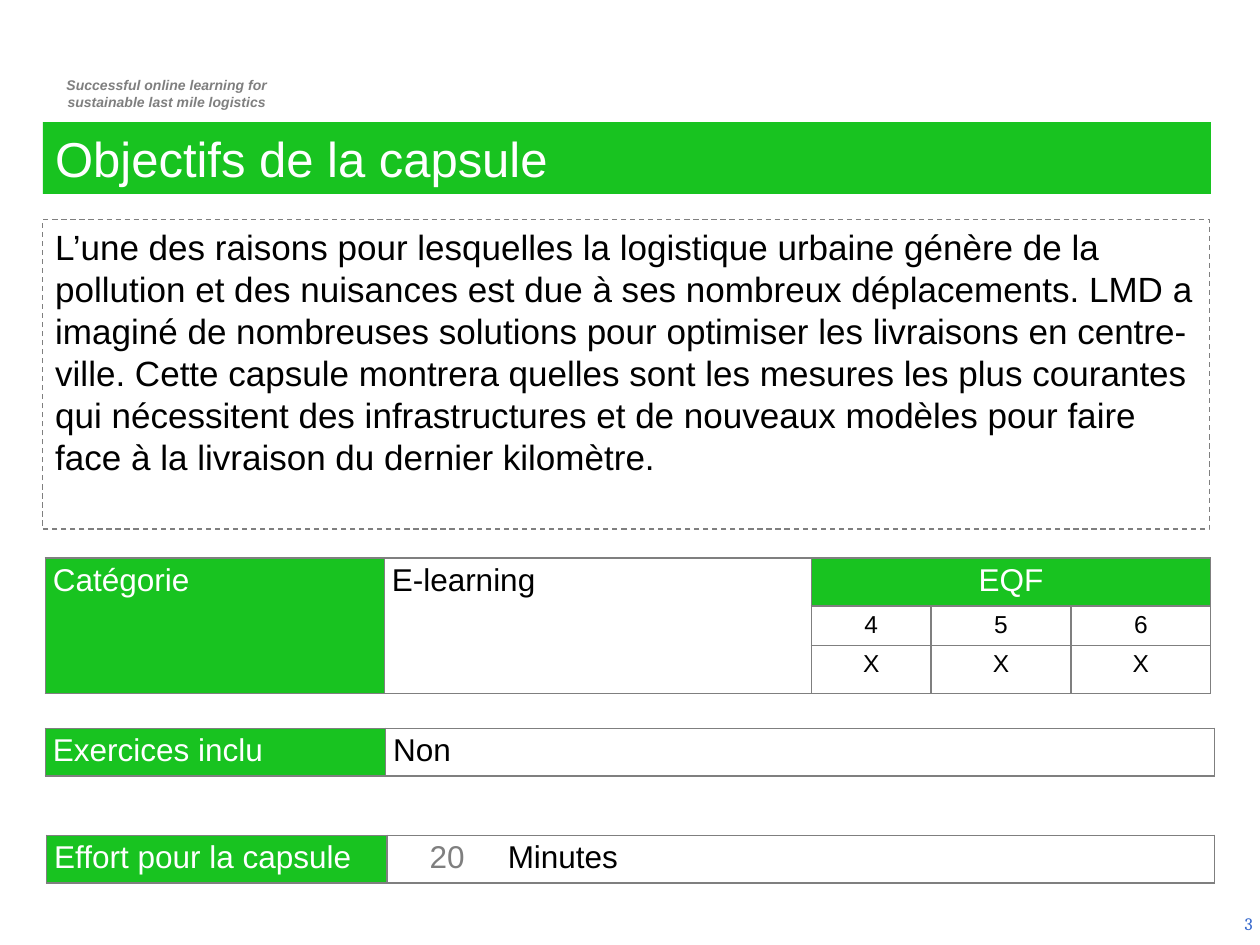
"""Build the capsule objectives slide with its three information tables."""
from lxml import etree
from pptx import Presentation
from pptx.dml.color import RGBColor
from pptx.enum import dml, shapes, text
from pptx.oxml import ns
from pptx.util import Inches, Pt

GREEN = RGBColor(0x18, 0xC3, 0x20)
GRAY = RGBColor(0x7F, 0x7F, 0x7F)
BLUE = RGBColor(0x33, 0x66, 0xCC)
BLACK = RGBColor(0, 0, 0)
WHITE = RGBColor(0xFF, 0xFF, 0xFF)
LEFT, CENTER, RIGHT = text.PP_ALIGN.LEFT, text.PP_ALIGN.CENTER, text.PP_ALIGN.RIGHT


def write(p, runs, align=LEFT, **fmt):
    p.alignment = align
    for words, color in runs:
        r = p.add_run()
        r.text = words
        for name, value in {"name": "Arial", **fmt}.items():
            setattr(r.font, name, value)
        r.font.color.rgb = color


def add_grid(s, x, y, cols, rows):
    size = [Inches(v) for v in (x, y, sum(cols), sum(rows))]
    tbl = s.shapes.add_table(len(rows), len(cols), *size).table
    tbl.first_row = tbl.horz_banding = False
    for lines, lengths, side in ((tbl.columns, cols, "width"), (tbl.rows, rows, "height")):
        for line, length in zip(lines, lengths):
            setattr(line, side, Inches(length))
    for cell in tbl.iter_cells():
        cell.margin_left = cell.margin_right = Inches(0.06)
        cell.margin_top = cell.margin_bottom = Inches(0.04)
        pr = cell._tc.get_or_add_tcPr()
        for edge in "LRTB":
            ln = etree.SubElement(pr, ns.qn(f"a:ln{edge}"), w=str(Pt(1)))
            fill = etree.SubElement(ln, ns.qn("a:solidFill"))
            etree.SubElement(fill, ns.qn("a:srgbClr"), val=str(GRAY))
        cell.fill.background()
    return tbl


prs = Presentation()
prs.slide_width, prs.slide_height = Inches(10), Inches(7.5)
s = prs.slides.add_slide(prs.slide_layouts[6])

tf = s.shapes.add_textbox(Inches(0.31), Inches(0.56), Inches(2.03), Inches(0.37)).text_frame
tf.word_wrap = True
tagline = ("Successful online learning for", "sustainable last mile logistics")
for i, words in enumerate(tagline):
    p = tf.add_paragraph() if i else tf.paragraphs[0]
    write(p, [(words, GRAY)], CENTER, size=Pt(8), bold=True, italic=True)

tf = s.shapes.add_textbox(Inches(7.71), Inches(7.13), Inches(2.33), Inches(0.4)).text_frame
tf.word_wrap = True
tf.vertical_anchor = text.MSO_ANCHOR.MIDDLE
write(tf.paragraphs[0], [("3", BLUE)], RIGHT, size=Pt(10), name="Cambria")

summary = (
    "L’une des raisons pour lesquelles la logistique urbaine génère de la pollution "
    "et des nuisances est due à ses nombreux déplacements. LMD a imaginé de nombreuses "
    "solutions pour optimiser les livraisons en centre-ville. Cette capsule montrera "
    "quelles sont les mesures les plus courantes qui nécessitent des infrastructures "
    "et de nouveaux modèles pour faire face à la livraison du dernier kilomètre."
)
boxes = (
    (0.97, 9.27, 0.57, "Objectifs de la capsule", 28, WHITE, GREEN),
    (1.74, 9.26, 2.46, summary, 20, BLACK, None),
)
for y, w, h, words, size, color, fill in boxes:
    sp = s.shapes.add_shape(shapes.MSO_SHAPE.RECTANGLE, Inches(0.34), Inches(y), Inches(w), Inches(h))
    sp.shadow.inherit = False
    if fill:
        sp.fill.solid()
        sp.fill.fore_color.rgb = fill
        sp.line.fill.background()
    else:
        sp.fill.background()
        sp.line.color.rgb = GRAY
        sp.line.width = Pt(0.75)
        sp.line.dash_style = dml.MSO_LINE.DASH
    tf = sp.text_frame
    tf.word_wrap = True
    tf.vertical_anchor = text.MSO_ANCHOR.TOP
    write(tf.paragraphs[0], [(words, color)], size=Pt(size))

category = add_grid(s, 0.36, 4.43, (2.69, 3.39, 0.95, 1.11, 1.11), (0.37, 0.31, 0.37))
for start, end in (((0, 0), (2, 0)), ((0, 1), (2, 1)), ((0, 2), (0, 4))):
    category.cell(*start).merge(category.cell(*end))
exercises = add_grid(s, 0.36, 5.78, (2.7, 6.58), (0.37,))
effort = add_grid(s, 0.37, 6.63, (2.7, 6.57), (0.37,))

headings = (
    (category, 0, "Catégorie", LEFT),
    (category, 2, "EQF", CENTER),
    (exercises, 0, "Exercices inclu", LEFT),
    (effort, 0, "Effort pour la capsule", LEFT),
)
for tbl, col, words, align in headings:
    cell = tbl.cell(0, col)
    cell.fill.solid()
    cell.fill.fore_color.rgb = GREEN
    write(cell.text_frame.paragraphs[0], [(words, WHITE)], align, size=Pt(18))

for row, labels in enumerate(("456", "XXX"), 1):
    for col, label in enumerate(labels, 2):
        p = category.cell(row, col).text_frame.paragraphs[0]
        write(p, [(label, BLACK)], CENTER, size=Pt(14))

p = effort.cell(0, 1).text_frame.paragraphs[0]
tabs = etree.SubElement(p._p.get_or_add_pPr(), ns.qn("a:tabLst"))
for stop in (0.28, 0.9):
    etree.SubElement(tabs, ns.qn("a:tab"), pos=str(Inches(stop)), algn="l")
values = (
    (category, [("E-learning", BLACK)]),
    (exercises, [("Non", BLACK)]),
    (effort, [("\t20\t", GRAY), ("Minutes", BLACK)]),
)
for tbl, runs in values:
    write(tbl.cell(0, 1).text_frame.paragraphs[0], runs, size=Pt(18))

prs.save("out.pptx")
